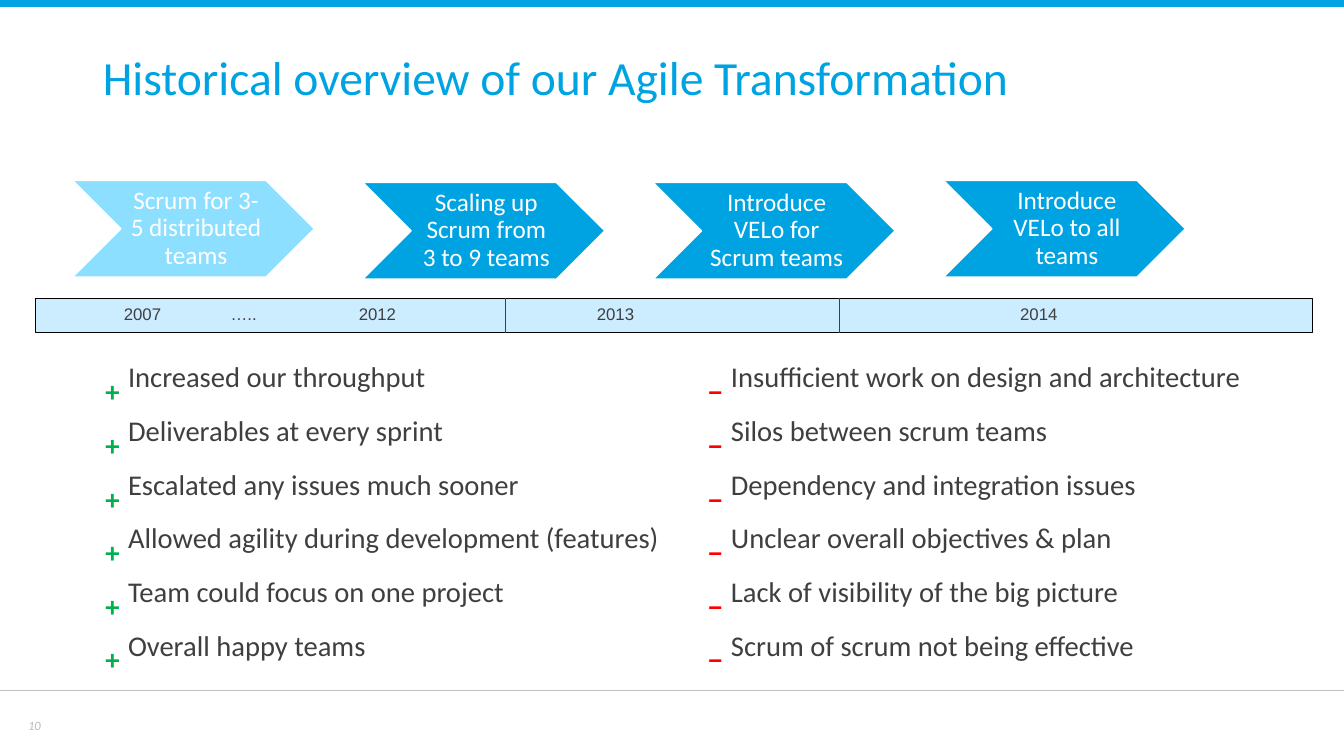
from lxml.etree import SubElement
from pptx import Presentation
from pptx.dml.color import RGBColor
from pptx.enum.shapes import MSO_CONNECTOR, MSO_SHAPE
from pptx.enum.text import MSO_ANCHOR, MSO_AUTO_SIZE, PP_ALIGN
from pptx.oxml.ns import qn
from pptx.util import Inches, Pt

WIDTH, HEIGHT = 13.33, 7.5
BLUE, PALE_BLUE, ICE = "00A3E2", "8DDFFF", "CCECFF"
TEXT, WHITE, BLACK = "3F3F3F", "FFFFFF", "000000"

STAGES = [
    ("Scrum for 3-5 distributed teams", PALE_BLUE, 23.87),
    ("Scaling up Scrum from 3 to 9 teams", BLUE, 24.13),
    ("Introduce VELo for Scrum teams", BLUE, 24.13),
    ("Introduce VELo to all teams", BLUE, 23.87),
]
YEARS = {"2007": 5.85, "…..": 13.8, "2012": 23.33, "2013": 41.04, "2014": 72.54}
BENEFITS = [
    "Increased our throughput",
    "Deliverables at every sprint",
    "Escalated any issues much sooner",
    "Allowed agility during development (features)",
    "Team could focus on one project",
    "Overall happy teams",
]
PROBLEMS = [
    "Insufficient work on design and architecture",
    "Silos between scrum teams",
    "Dependency and integration issues",
    "Unclear overall objectives & plan",
    "Lack of visibility of the big picture",
    "Scrum of scrum not being effective",
]


def x(share):
    """Percentage of the slide's width."""
    return Inches(WIDTH * share / 100)


def y(share):
    """Percentage of the slide's height."""
    return Inches(HEIGHT * share / 100)


def box(left, top, width, height):
    return x(left), y(top), x(width), y(height)


def color(hex_code):
    return RGBColor.from_string(hex_code)


def add_bullet(p, char, hex_code):
    pPr = p._p.get_or_add_pPr()
    pPr.set("marL", str(Inches(0.25)))
    pPr.set("indent", str(-Inches(0.25)))
    clr = SubElement(pPr, qn("a:buClr"))
    SubElement(clr, qn("a:srgbClr"), val=hex_code)
    SubElement(pPr, qn("a:buSzPct"), val="200000")
    SubElement(pPr, qn("a:buFont"), typeface="Calibri")
    SubElement(pPr, qn("a:buChar"), char=char)


def add_tabs(p, stops):
    tabs = SubElement(p._p.get_or_add_pPr(), qn("a:tabLst"))
    for stop in stops:
        SubElement(tabs, qn("a:tab"), pos=str(x(stop)), algn="l")


def write(tf, lines, size, hex_code=TEXT, font="Calibri", italic=False,
          align=PP_ALIGN.LEFT, anchor=MSO_ANCHOR.TOP, spacing=1.0,
          before=0, after=0, bullet=None, tabs=None):
    tf.word_wrap = True
    tf.auto_size = MSO_AUTO_SIZE.NONE
    tf.vertical_anchor = anchor
    for i, line in enumerate(lines):
        p = tf.add_paragraph() if i else tf.paragraphs[0]
        if bullet:
            add_bullet(p, *bullet)
        if tabs:
            add_tabs(p, tabs)
        p.alignment, p.line_spacing = align, spacing
        p.space_before, p.space_after = Pt(before if i else 0), Pt(after)
        r = p.add_run()
        r.text = line
        r.font.name, r.font.size, r.font.italic = font, Pt(size), italic
        r.font.color.rgb = color(hex_code)


def add_block(s, kind, place, fill, line=None, weight=1):
    sp = s.shapes.add_shape(kind, *place)
    sp.shadow.inherit = False
    sp.fill.solid()
    sp.fill.fore_color.rgb = color(fill)
    if line:
        sp.line.color.rgb = color(line)
        sp.line.width = Pt(weight)
    else:
        sp.line.fill.background()
    return sp


def add_line(s, start, end, hex_code, weight):
    line = s.shapes.add_connector(MSO_CONNECTOR.STRAIGHT, *start, *end)
    line.line.color.rgb = color(hex_code)
    line.line.width = Pt(weight)
    SubElement(line._element.spPr, qn("a:effectLst"))


def place_placeholder(sp, place):
    sp.left, sp.top, sp.width, sp.height = place
    return sp.text_frame


def add_stage(s, column, label, fill, top):
    sp = add_block(s, MSO_SHAPE.CHEVRON, box(5.4 + 21.6 * column, top, 18, 12.8),
                   fill, WHITE)
    tf = sp.text_frame
    tf.margin_left = Inches(0.08)
    tf.margin_right = tf.margin_top = tf.margin_bottom = Inches(0.03)
    write(tf, [label], 18, WHITE, align=PP_ALIGN.CENTER,
          anchor=MSO_ANCHOR.MIDDLE, spacing=0.9)


def add_timeline(s):
    top, height = 39.47, 4.53
    bar = add_block(s, MSO_SHAPE.RECTANGLE, box(2.63, top, 95.05, height),
                    ICE, BLACK, 0.75)
    write(bar.text_frame, ["".join("\t" + year for year in YEARS)], 12,
          font="Arial", tabs=YEARS.values())
    for divider in (37.58, 62.49):
        add_line(s, (x(divider), y(top)), (x(divider), y(top + height)), TEXT, 0.75)


def main():
    prs = Presentation()
    prs.slide_width, prs.slide_height = Inches(WIDTH), Inches(HEIGHT)
    s = prs.slides.add_slide(prs.slide_layouts[3])
    title, benefits, problems = s.placeholders

    add_block(s, MSO_SHAPE.RECTANGLE, box(0, 0, 100, 0.93), BLUE)
    add_line(s, (0, y(91.33)), (x(100), y(91.33)), "BFBFC1", 0.5)
    write(place_placeholder(title, box(6.9, 6.53, 88.67, 15.6)),
          ["Historical overview of our Agile Transformation"], 34, BLUE, spacing=0.9)

    for sp, left, items, bullet in (
        (benefits, 6.9, BENEFITS, ("₊", "00B050")),
        (problems, 51.76, PROBLEMS, ("₋", "FF0000")),
    ):
        write(place_placeholder(sp, box(left, 47.2, 43.81, 42.8)), items, 20.4,
              spacing=0.95, before=9, after=6, bullet=bullet)

    for column, stage in enumerate(STAGES):
        add_stage(s, column, *stage)
    add_timeline(s)

    number = s.shapes.add_textbox(*box(1.35, 93.33, 4.05, 5.33))
    write(number.text_frame, ["10"], 9, "BABABA", italic=True,
          anchor=MSO_ANCHOR.MIDDLE)
    prs.save("out.pptx")


if __name__ == "__main__":
    main()
